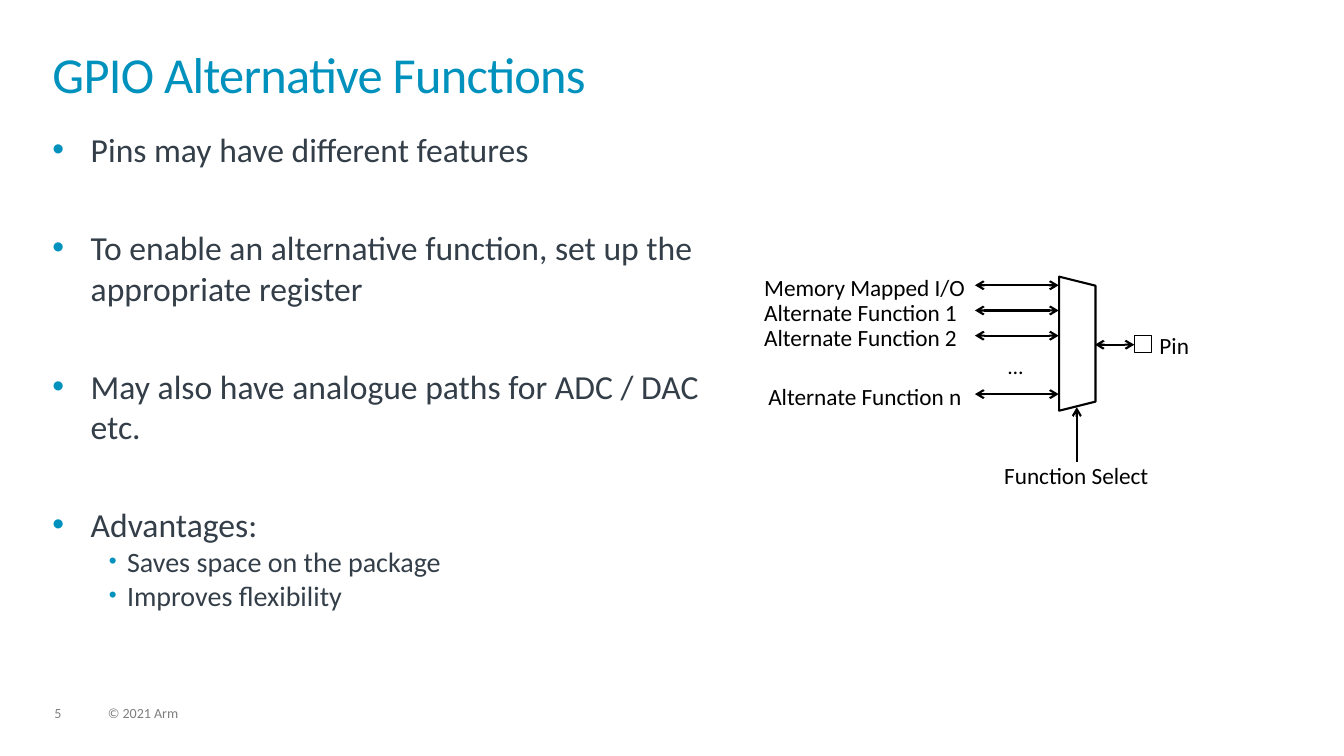
from lxml.etree import SubElement
from pptx import Presentation
from pptx.dml.color import RGBColor
from pptx.enum.shapes import MSO_CONNECTOR, MSO_SHAPE
from pptx.oxml.ns import qn
from pptx.util import Inches, Pt

BLUE, SLATE, GREY, BLACK, WHITE = "0091BD", "333E48", "7F7F7F", "000000", "FFFFFF"

deck = Presentation()
deck.slide_width, deck.slide_height = Inches(13.33), Inches(7.5)
page = deck.slides.add_slide(deck.slide_layouts[6])


def add_text(lines, left, top, width, height, size=16.6, color=BLACK, wrap=False,
             line_spacing=None, tracking=None):
    """Add a text box; each line is a string or a dict of text, size, bullet and spacing."""
    box = page.shapes.add_textbox(Inches(left), Inches(top), Inches(width), Inches(height))
    frame = box.text_frame
    frame.word_wrap = wrap
    frame.margin_left = frame.margin_right = frame.margin_top = frame.margin_bottom = 0
    for index, line in enumerate([lines] if isinstance(lines, str) else lines):
        line = {"text": line} if isinstance(line, str) else line
        para = frame.paragraphs[0] if index == 0 else frame.add_paragraph()
        para.line_spacing = line_spacing
        if "indent" in line:
            para.level = line["level"]
            props = para._p.get_or_add_pPr()
            props.set("marL", str(Inches(line["indent"])))
            props.set("indent", str(-Inches(line["hang"])))
            SubElement(SubElement(props, qn("a:buClr")), qn("a:srgbClr"), val=BLUE)
            SubElement(props, qn("a:buSzPct"), val=line["bullet_size"])
            SubElement(props, qn("a:buFont"), typeface="Arial")
            SubElement(props, qn("a:buChar"), char="•")
            para.space_before = Pt(line["before"] if index else 0)
        span = para.add_run()
        span.text = line["text"]
        span.font.name = "Calibri"
        span.font.size = Pt(line.get("size", size))
        span.font.color.rgb = RGBColor.from_string(color)
        if tracking:
            span._r.get_or_add_rPr().set("spc", str(tracking))


def add_arrow(x1, y1, x2, y2, ends):
    arrow = page.shapes.add_connector(MSO_CONNECTOR.STRAIGHT, Inches(x1), Inches(y1),
                                      Inches(x2), Inches(y2))
    arrow.line.color.rgb = RGBColor.from_string(BLACK)
    arrow.line.width = Pt(1.5)
    for end in ends:
        SubElement(arrow.line._get_or_add_ln(), qn(f"a:{end}"), type="arrow")
    SubElement(arrow._element.spPr, qn("a:effectLst"))


# Footer and title
add_text("5", 0.54, 7.01, 0.34, 0.15, size=10, color=GREY, wrap=True, line_spacing=0.9)
add_text("© 2021 Arm", 1.07, 7.01, 5.07, 0.15, size=10, color=GREY, wrap=True,
         line_spacing=0.9)
add_text("GPIO Alternative Functions", 0.52, 0.52, 12.28, 0.72, size=36, color=BLUE,
         wrap=True, line_spacing=0.85, tracking=-50)

# Bullet list
main = dict(level=0, size=24, indent=0.38, hang=0.38, bullet_size="100000", before=41.3)
sub = dict(level=1, size=20, indent=0.74, hang=0.18, bullet_size="80000", before=0)
bullets = [
    (main, "Pins may have different features"),
    (main, "To enable an alternative function, set up the appropriate register"),
    (main, "May also have analogue paths for ADC / DAC etc."),
    (main, "Advantages:"),
    (sub, "Saves space on the package"),
    (sub, "Improves flexibility"),
]
add_text([dict(style, text=text) for style, text in bullets], 0.52, 1.28, 6.73, 5.41,
         color=SLATE, wrap=True)

# Multiplexer and pin
mux = page.shapes.add_shape(MSO_SHAPE.TRAPEZOID, Inches(10.02), Inches(3.23),
                            Inches(1.33), Inches(0.36))
mux.rotation = 90
mux.fill.solid()
mux.fill.fore_color.rgb = RGBColor.from_string(WHITE)
pin = page.shapes.add_shape(MSO_SHAPE.RECTANGLE, Inches(11.25), Inches(3.33),
                            Inches(0.17), Inches(0.17))
pin.fill.background()
for shape, weight in ((mux, 1.5), (pin, 1)):
    shape.shadow.inherit = False
    shape.line.color.rgb = RGBColor.from_string(BLACK)
    shape.line.width = Pt(weight)
add_text("Pin", 11.5, 3.29, 0.42, 0.25)
add_text("Function Select", 9.96, 4.58, 1.44, 0.25)
add_arrow(10.68, 4.58, 10.68, 4.04, ["tailEnd"])
add_arrow(11.25, 3.42, 10.86, 3.42, ["headEnd", "tailEnd"])

# Multiplexer inputs
inputs = [
    ("Memory Mapped I/O", 7.58, 2.71),
    ("Alternate Function 1", 7.58, 2.96),
    ("Alternate Function 2", 7.58, 3.21),
    ("Alternate Function n", 7.62, 3.79),
]
for label, left, top in inputs:
    add_text(label, left, top, 2, 0.25)
    add_arrow(9.67, top + 0.12, 10.5, top + 0.12, ["headEnd", "tailEnd"])
add_text("…", 10, 3.5, 0.33, 0.21, size=15.3)

deck.save("out.pptx")
